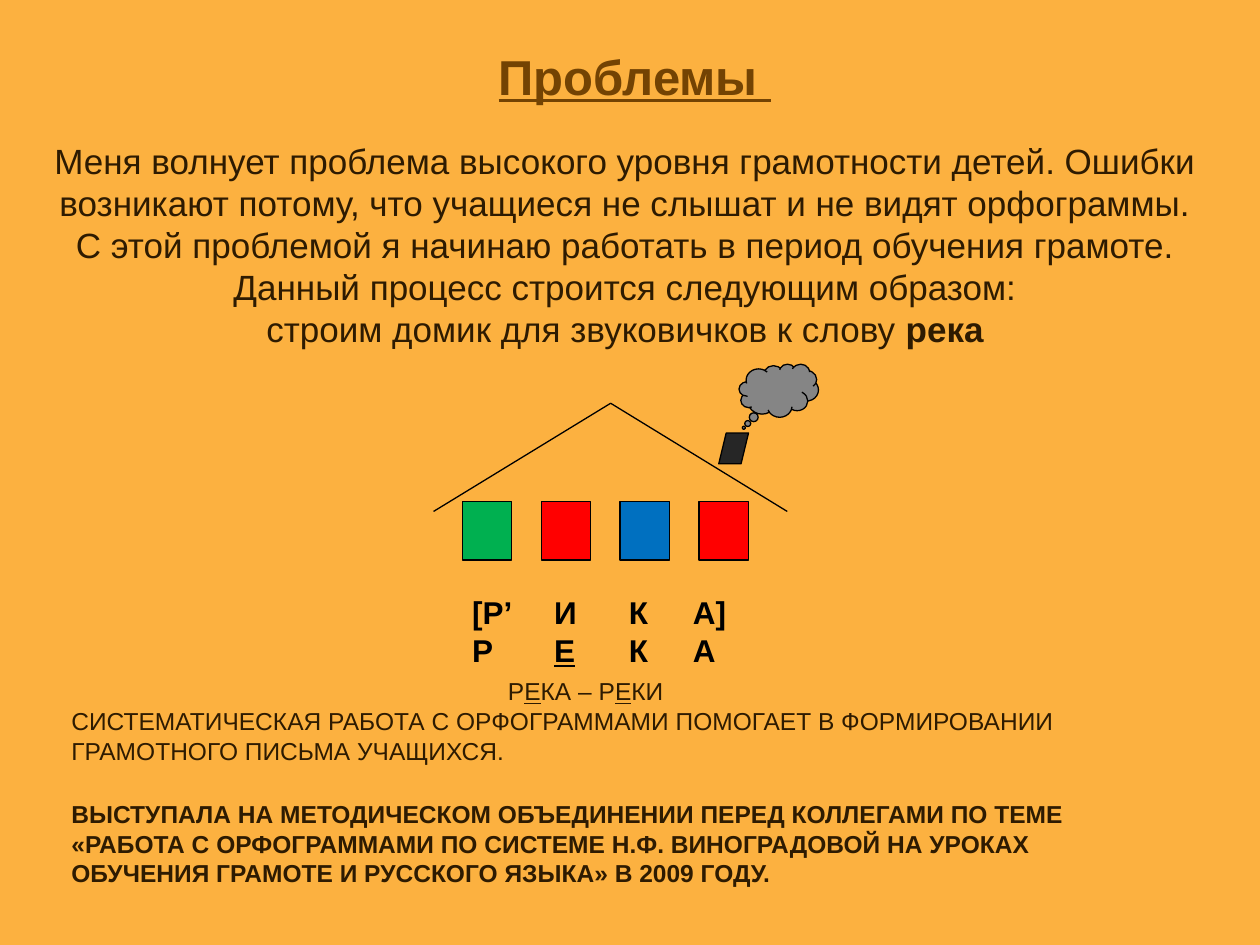
from lxml.etree import SubElement as Sub
from pptx import Presentation
from pptx.dml.color import RGBColor as RGB
from pptx.enum.shapes import MSO_CONNECTOR as Link, MSO_SHAPE as Kind
from pptx.enum.text import MSO_ANCHOR as Anchor, MSO_AUTO_SIZE as Fit, PP_ALIGN as Align
from pptx.oxml.ns import qn
from pptx.util import Cm, Pt

SAND = RGB(0xFC, 0xB1, 0x40)
BROWN = RGB(0x73, 0x43, 0x03)
DARK = RGB(0x2E, 0x1B, 0x01)
BLACK = RGB(0, 0, 0)
GREEN = RGB(0x00, 0xB0, 0x50)
RED = RGB(0xFF, 0, 0)
BLUE = RGB(0x00, 0x70, 0xC0)
COAL = RGB(0x26, 0x26, 0x26)
SMOKE = RGB(0x85, 0x85, 0x85)


def set_frame(frame):
    """Make a text frame wrap, with no insets and no resizing."""
    frame.word_wrap = True
    frame.auto_size = Fit.NONE
    frame.vertical_anchor = Anchor.TOP
    frame.margin_left = frame.margin_right = frame.margin_top = frame.margin_bottom = 0
    return frame


def add_box(slide, x, y, w, h):
    """Add an empty text box and return its frame."""
    return set_frame(slide.shapes.add_textbox(Cm(x), Cm(y), Cm(w), Cm(h)).text_frame)


def add_run(para, text, size, color, bold=False, line=False):
    """Add one run of text to a paragraph."""
    run = para.add_run()
    run.text = text
    font = run.font
    font.name, font.size, font.bold, font.underline = "Arial", Pt(size), bold, line
    font.color.rgb = color


def next_para(frame, pitch, align=Align.LEFT):
    """Return the next paragraph to fill, with a fixed line pitch."""
    first = frame.paragraphs[0]
    para = frame.add_paragraph() if first.runs else first
    para.line_spacing, para.alignment = Pt(pitch), align
    return para


def add_title(slide, x, y, w, h):
    """Place and fill the title."""
    title = slide.shapes.title
    title.left, title.top, title.width, title.height = Cm(x), Cm(y), Cm(w), Cm(h)
    para = set_frame(title.text_frame).paragraphs[0]
    para.alignment = Align.CENTER
    add_run(para, "Проблемы ", 28, BROWN, True, True)


def add_intro(slide, x, y, w, h):
    """Add the centred opening text."""
    frame = add_box(slide, x, y, w, h)
    add_run(next_para(frame, 24, Align.CENTER),
            "Меня волнует проблема высокого уровня грамотности детей. Ошибки "
            "возникают потому, что учащиеся не слышат и не видят орфограммы. "
            "С этой проблемой я начинаю работать в период обучения грамоте. "
            "Данный процесс строится следующим образом:", 20, DARK)
    para = next_para(frame, 24, Align.CENTER)
    add_run(para, "строим домик для звуковичков к слову ", 20, DARK)
    add_run(para, "река", 20, DARK, True)


def add_part(slide, kind, x, y, w, h, fill):
    """Add one filled part of the house with a thin black outline."""
    part = slide.shapes.add_shape(kind, Cm(x), Cm(y), Cm(w), Cm(h))
    part.shadow.inherit = False
    part.fill.solid()
    part.fill.fore_color.rgb = fill
    part.line.color.rgb = BLACK
    part.line.width = Pt(0.75)
    return part


def add_house(slide, x, y):
    """Draw windows, roof, chimney and smoke from the top left corner."""
    for i, fill in enumerate((GREEN, RED, BLUE, RED)):
        add_part(slide, Kind.RECTANGLE, x + 0.58 + 1.59 * i, y + 2.77, 1, 1.18, fill)
    for eave in (0, 7.13):
        roof = slide.shapes.add_connector(
            Link.STRAIGHT, Cm(x + 3.57), Cm(y + 0.79), Cm(x + eave), Cm(y + 2.97))
        roof.line.color.rgb = BLACK
        roof.line.width = Pt(0.75)
        Sub(roof._element.spPr, qn("a:effectLst"))
    add_part(slide, Kind.PARALLELOGRAM, x + 5.75, y + 1.39, 0.6, 0.62, COAL)
    cloud = add_part(slide, Kind.CLOUD_CALLOUT, x + 6.16, y, 1.6, 1.07, SMOKE)
    cloud.adjustments[0], cloud.adjustments[1] = -0.44, 0.7


def add_sounds(slide, x, y, w, h):
    """Add the sounds and letters of the word in tabbed columns."""
    frame = add_box(slide, x, y, w, h)
    for row in (("[Р’", "И", "К", "А]"), ("Р", "Е", "К", "А")):
        para = next_para(frame, 21.7)
        tabs = Sub(para._p.get_or_add_pPr(), qn("a:tabLst"))
        for stop in (1.65, 3.16, 4.45):
            Sub(tabs, qn("a:tab"), pos=str(Cm(stop)), algn="l")
        for i, text in enumerate(row):
            if i:
                add_run(para, "\t", 18, BLACK, True)
            add_run(para, text, 18, BLACK, True, text == "Е")


def add_notes(slide, x, y, w, h):
    """Add the word pair and the two closing statements."""
    frame = add_box(slide, x, y, w, h)
    pair = next_para(frame, 17)
    pair._p.get_or_add_pPr().set("indent", str(Cm(8.8)))
    for text in ("Р", "Е", "КА – Р", "Е", "КИ"):
        add_run(pair, text, 14, DARK, line=text == "Е")
    add_run(next_para(frame, 17),
            "СИСТЕМАТИЧЕСКАЯ РАБОТА С ОРФОГРАММАМИ ПОМОГАЕТ В ФОРМИРОВАНИИ "
            "ГРАМОТНОГО ПИСЬМА УЧАЩИХСЯ.", 14, DARK)
    talk = next_para(frame, 17)
    talk.space_before = Pt(19)
    add_run(talk,
            "ВЫСТУПАЛА НА МЕТОДИЧЕСКОМ ОБЪЕДИНЕНИИ ПЕРЕД КОЛЛЕГАМИ ПО ТЕМЕ "
            "«РАБОТА С ОРФОГРАММАМИ ПО СИСТЕМЕ Н.Ф. ВИНОГРАДОВОЙ НА УРОКАХ "
            "ОБУЧЕНИЯ ГРАМОТЕ И РУССКОГО ЯЗЫКА» В 2009 ГОДУ.", 14, DARK, True)


def main():
    """Build and save the slide."""
    deck = Presentation()
    deck.slide_width, deck.slide_height = Cm(25.4), Cm(19.05)
    slide = deck.slides.add_slide(deck.slide_layouts[5])
    slide.background.fill.solid()
    slide.background.fill.fore_color.rgb = SAND
    add_title(slide, 2, 0.93, 21.6, 1.3)
    add_intro(slide, 1.04, 2.82, 23.12, 4.3)
    add_house(slide, 8.74, 7.34)
    add_sounds(slide, 9.52, 11.95, 6, 1.6)
    add_notes(slide, 1.44, 13.63, 21.9, 4.4)
    deck.save("out.pptx")


if __name__ == "__main__":
    main()
